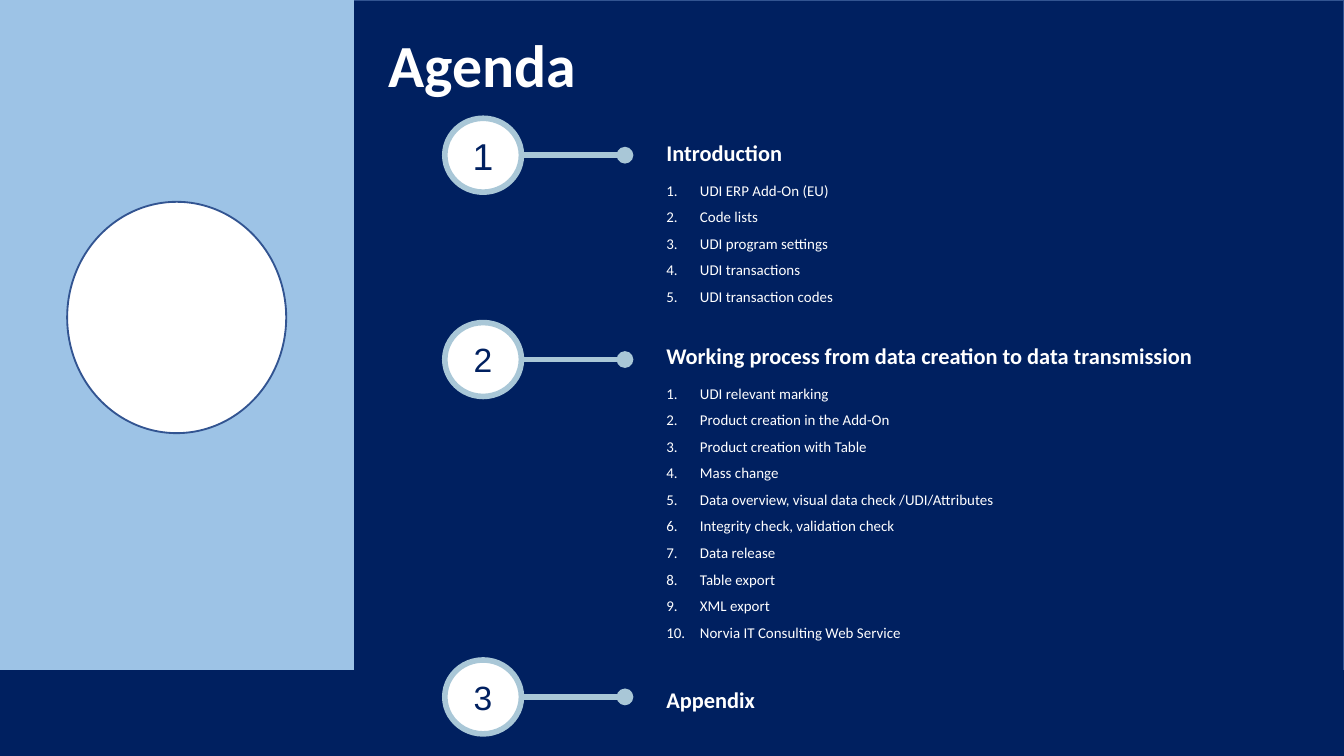
from dataclasses import dataclass

from lxml import etree
from pptx import Presentation
from pptx import util as u
from pptx.dml.color import RGBColor
from pptx.enum import shapes, text
from pptx.oxml.ns import qn

COLORS = {"navy": "002060", "sky": "9DC3E6", "outline": "325491",
          "ring": "A9C7D7", "white": "FFFFFF"}
WIDTH, HEIGHT = u.Inches(10), u.Inches(5.625)

# Horizontal positions and sizes, in percent of the slide
TEXT_LEFT, TEXT_WIDTH, TEXT_HEIGHT = 48.6, 49.4, 5.16
MARKER_LEFT, MARKER_WIDTH, MARKER_HEIGHT = 33.1, 5.7, 9.78
CONNECTOR_END = 46.5
LIST_OFFSET = 5.42


@dataclass
class Section:
    number: str
    number_size: int
    marker_top: float
    heading_top: float
    heading: str
    topics: tuple[str, ...] = ()


SECTIONS = [
    Section("1", 20, 15.64, 17.96, "Introduction",
            ("UDI ERP Add-On (EU)", "Code lists", "UDI program settings",
             "UDI transactions", "UDI transaction codes")),
    Section("2", 18, 42.67, 44.8,
            "Working process from data creation to data transmission",
            ("UDI relevant marking", "Product creation in the Add-On",
             "Product creation with Table", "Mass change",
             "Data overview, visual data check /UDI/Attributes",
             "Integrity check, validation check", "Data release",
             "Table export", "XML export",
             "Norvia IT Consulting Web Service")),
    Section("3", 18, 87.3, 90.31, "Appendix"),
]


def color(name: str) -> RGBColor:
    return RGBColor.from_string(COLORS[name])


def across(percent: float) -> int:
    return round(WIDTH * percent / 100)


def down(percent: float) -> int:
    return round(HEIGHT * percent / 100)


def place(left: float, top: float, width: float, height: float) -> tuple[int, ...]:
    return across(left), down(top), across(width), down(height)


def style(paragraph, size: float, ink: str, face: str = "Calibri", bold: bool = False) -> None:
    font = paragraph.font
    font.size, font.name, font.bold = u.Pt(size), face, bold
    font.color.rgb = color(ink)


def add_panel(slide, kind, box: tuple[int, ...], fill: str, line: str, weight: float = 1):
    panel = slide.shapes.add_shape(kind, *box)
    panel.shadow.inherit = False
    panel.fill.solid()
    panel.fill.fore_color.rgb = color(fill)
    panel.line.color.rgb = color(line)
    panel.line.width = u.Pt(weight)
    return panel


def add_lines(slide, box: tuple[int, ...], lines: tuple[str, ...], size: float,
              bold: bool = False, numbered: bool = False) -> None:
    frame = slide.shapes.add_textbox(*box).text_frame
    frame.word_wrap = True
    for index, line in enumerate(lines):
        paragraph = frame.paragraphs[0] if index == 0 else frame.add_paragraph()
        paragraph.text = line
        paragraph.line_spacing = 0.9
        if index:
            paragraph.space_before = u.Pt(5.6)
        if numbered:
            properties = paragraph._p.get_or_add_pPr()
            properties.set("marL", str(u.Inches(0.25)))
            properties.set("indent", str(-u.Inches(0.25)))
            etree.SubElement(properties, qn("a:buFont"), typeface="+mj-lt")
            etree.SubElement(properties, qn("a:buAutoNum"), type="arabicPeriod")
        style(paragraph, size, "white", bold=bold)


def add_marker(slide, section: Section) -> None:
    circle = add_panel(slide, shapes.MSO_SHAPE.OVAL,
                       place(MARKER_LEFT, section.marker_top, MARKER_WIDTH, MARKER_HEIGHT),
                       "white", "ring", 3)
    frame = circle.text_frame
    frame.vertical_anchor = text.MSO_ANCHOR.MIDDLE
    number = frame.paragraphs[0]
    number.text = section.number
    number.alignment = text.PP_ALIGN.CENTER
    style(number, section.number_size, "navy", "Arial")

    # Line from the circle to a round end
    middle = circle.top + circle.height // 2
    pointer = slide.shapes.add_connector(shapes.MSO_CONNECTOR.STRAIGHT,
                                         circle.left + circle.width, middle,
                                         across(CONNECTOR_END), middle)
    pointer.line.color.rgb = color("ring")
    pointer.line.width = u.Pt(3)
    etree.SubElement(pointer.line._get_or_add_ln(), qn("a:tailEnd"), type="oval")
    etree.SubElement(pointer._element.spPr, qn("a:effectLst"))


def main() -> None:
    deck = Presentation()
    deck.slide_width, deck.slide_height = WIDTH, HEIGHT
    slide = deck.slides.add_slide(deck.slide_layouts[6])

    # Background panels and the white disc
    box = shapes.MSO_SHAPE.RECTANGLE
    add_panel(slide, box, place(0.6, 0, 99.4, 100), "navy", "outline")
    add_panel(slide, box, place(0, 0, 26.3, 100), "sky", "sky")
    add_panel(slide, box, place(0, 88.8, 100, 11.2), "navy", "navy")
    add_panel(slide, shapes.MSO_SHAPE.OVAL, place(5, 26.7, 16.3, 30.6), "white", "outline")

    # Title
    add_lines(slide, place(27.9, 3.9, 60.1, 9.8), ("Agenda",), 32, bold=True)

    # Agenda sections
    for section in SECTIONS:
        add_marker(slide, section)
        add_lines(slide, place(TEXT_LEFT, section.heading_top, TEXT_WIDTH, TEXT_HEIGHT),
                  (section.heading,), 12, bold=True)
        if section.topics:
            add_lines(slide, place(TEXT_LEFT, section.heading_top + LIST_OFFSET,
                                   TEXT_WIDTH, TEXT_HEIGHT),
                      section.topics, 8, numbered=True)

    deck.save("out.pptx")


if __name__ == "__main__":
    main()
